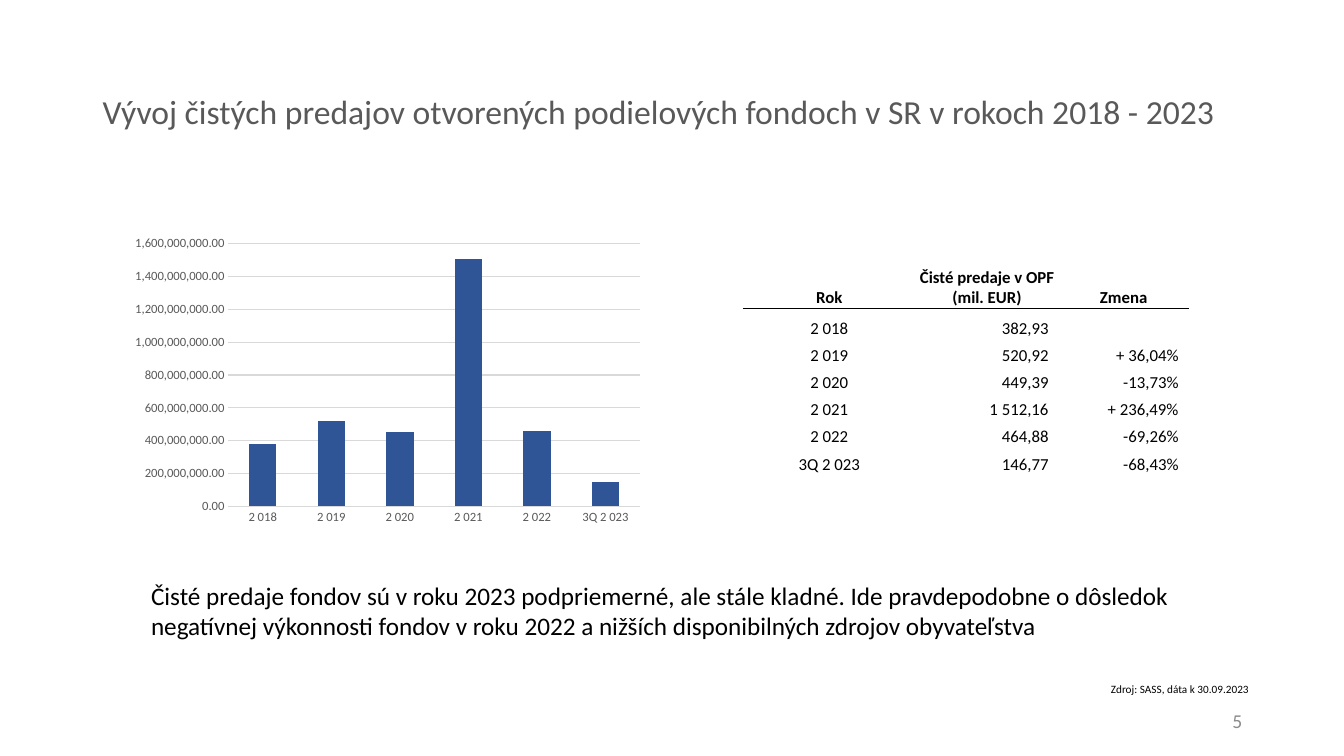
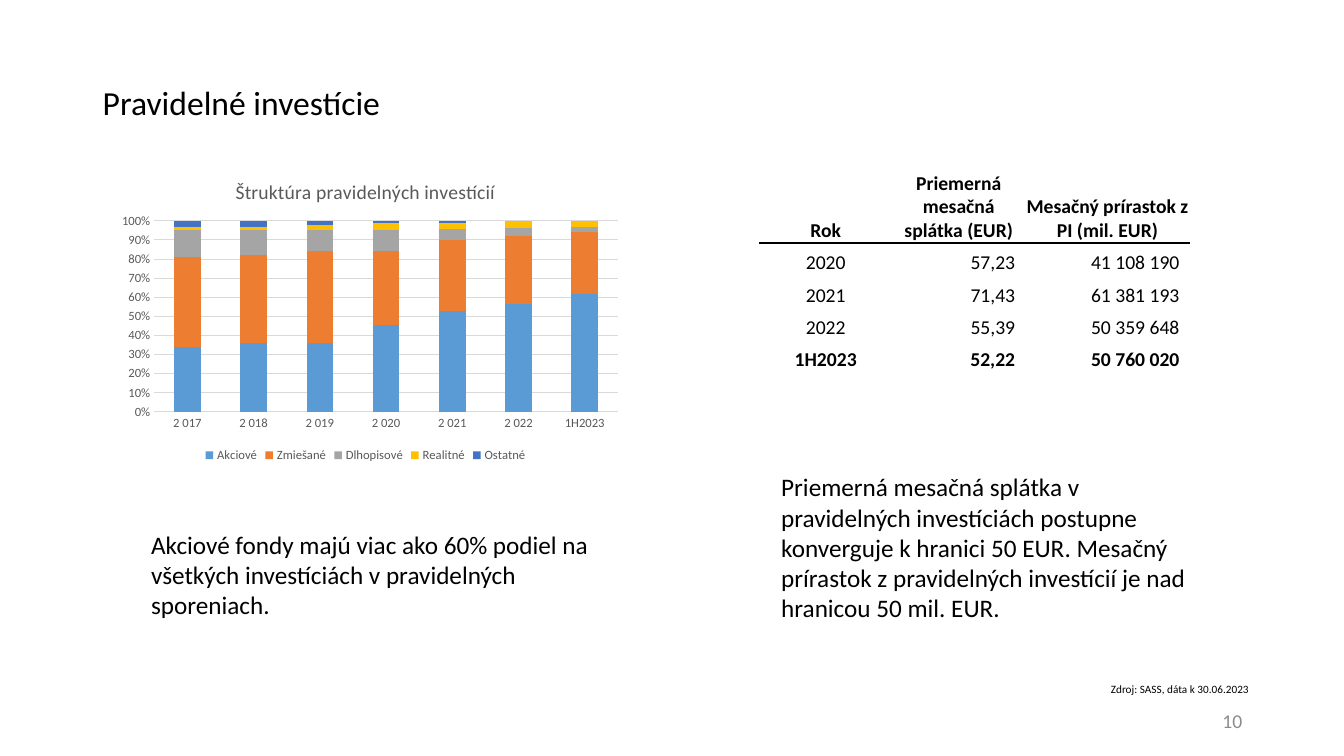
from lxml import etree
from pptx import Presentation
from pptx.chart.data import CategoryChartData
from pptx.dml.color import RGBColor
from pptx.enum.chart import XL_CHART_TYPE, XL_LEGEND_POSITION, XL_TICK_MARK
from pptx.enum.text import MSO_ANCHOR, PP_ALIGN
from pptx.oxml import parse_xml
from pptx.oxml.ns import nsdecls, qn
from pptx.util import Inches, Pt

CLUSTERED = XL_CHART_TYPE.COLUMN_CLUSTERED
STACKED = XL_CHART_TYPE.COLUMN_STACKED_100
LEGEND_BOTTOM = XL_LEGEND_POSITION.BOTTOM
NO_TICK = XL_TICK_MARK.NONE
TOP, MIDDLE, BOTTOM = MSO_ANCHOR.TOP, MSO_ANCHOR.MIDDLE, MSO_ANCHOR.BOTTOM
LEFT, CENTER, RIGHT = PP_ALIGN.LEFT, PP_ALIGN.CENTER, PP_ALIGN.RIGHT

FONT = "Calibri"
BLACK = RGBColor(0, 0, 0)
GRAY = RGBColor(0x59, 0x59, 0x59)
PAGE_GRAY = RGBColor(0x8C, 0x8C, 0x8C)
GRID = RGBColor(0xD9, 0xD9, 0xD9)
NAVY = RGBColor(0x2F, 0x55, 0x97)
BLUE = RGBColor(0x5B, 0x9B, 0xD5)
ORANGE = RGBColor(0xED, 0x7D, 0x31)
SILVER = RGBColor(0xA5, 0xA5, 0xA5)
YELLOW = RGBColor(0xFF, 0xC0, 0x00)
ROYAL = RGBColor(0x44, 0x72, 0xC4)
NO_STYLE = "{2D5ABB26-0587-4C30-8999-92F81FD0307C}"

PAGES = [
    {
        "title": "Vývoj čistých predajov otvorených podielových fondoch v SR v rokoch 2018 - 2023",
        "title_at": (0.92, 0.4, 11.94, 1.45), "title_color": GRAY,
        "number": "5", "source": "Zdroj: SASS, dáta k 30.09.2023",
        "notes": [
            ((1.4, 5.71, 10.53, 0.71),
             "Čisté predaje fondov sú v roku 2023 podpriemerné, ale stále kladné. Ide pravdepodobne o dôsledok "
             "negatívnej výkonnosti fondov v roku 2022 a nižších disponibilných zdrojov obyvateľstva"),
        ],
        "chart": {
            "kind": CLUSTERED, "at": (1.22, 2.3, 5.23, 2.96), "plot": (0.2, 0.04, 0.78, 0.88),
            "categories": ["2 018", "2 019", "2 020", "2 021", "2 022", "3Q 2 023"],
            "series": [("Series 1", NAVY, [380000000, 520000000, 450000000,
                                           1510000000, 460000000, 150000000])],
            "format": "#,##0.00", "top": 1600000000, "step": 200000000,
        },
        "table": {
            "at": (7.37, 2.52), "widths": [1.71, 1.42, 1.29], "head": 0.54, "row": 0.27,
            "size": 12, "rule": 0.5, "bold_rows": [0],
            "rows": [
                ["Rok", "Čisté predaje v OPF (mil. EUR)", "Zmena"],
                ["2 018", "382,93", ""],
                ["2 019", "520,92", "+ 36,04%"],
                ["2 020", "449,39", "-13,73%"],
                ["2 021", "1 512,16", "+ 236,49%"],
                ["2 022", "464,88", "-69,26%"],
                ["3Q 2 023", "146,77", "-68,43%"],
            ],
        },
    },
    {
        "title": "Pravidelné investície",
        "title_at": (0.92, 0.41, 11.5, 1.25), "title_color": BLACK,
        "number": "10", "source": "Zdroj: SASS, dáta k 30.06.2023",
        "notes": [
            ((1.4, 5.2, 4.71, 1.01),
             "Akciové fondy majú viac ako 60% podiel na všetkých investíciách v pravidelných sporeniach."),
            ((7.65, 4.63, 4.33, 1.62),
             "Priemerná mesačná splátka v pravidelných investíciách postupne konverguje k hranici 50 EUR. "
             "Mesačný prírastok z pravidelných investícií je nad hranicou 50 mil. EUR."),
        ],
        "chart": {
            "kind": STACKED, "at": (1.07, 1.62, 5.11, 3.01), "plot": (0.09, 0.19, 0.9, 0.63),
            "title": "Štruktúra pravidelných investícií",
            "categories": ["2 017", "2 018", "2 019", "2 020", "2 021", "2 022", "1H2023"],
            "series": [
                ("Akciové", BLUE, [34, 36, 36, 46, 53, 57, 61]),
                ("Zmiešané", ORANGE, [47, 46, 48, 39, 37, 36, 32]),
                ("Dlhopisové", SILVER, [14, 13, 11, 11, 6, 4, 3]),
                ("Realitné", YELLOW, [2, 2, 3, 4, 3, 4, 3]),
                ("Ostatné", ROYAL, [3, 3, 2, 1, 1, 0, 0]),
            ],
            "format": "0%", "top": 1, "step": 0.1,
        },
        "table": {
            "at": (7.53, 1.66), "widths": [1.32, 1.32, 1.63], "head": 0.75, "row": 0.32,
            "size": 14, "rule": 1, "bold_rows": [0, 4],
            "rows": [
                ["Rok", "Priemerná mesačná splátka (EUR)", "Mesačný prírastok z PI (mil. EUR)"],
                ["2020", "57,23", "41 108 190"],
                ["2021", "71,43", "61 381 193"],
                ["2022", "55,39", "50 359 648"],
                ["1H2023", "52,22", "50 760 020"],
            ],
        },
    },
]


def style_font(font, size, color, bold=False):
    font.name = FONT
    font.size = Pt(size)
    font.color.rgb = color
    font.bold = bold


def add_text(page, at, text, size, color=BLACK, align=LEFT, anchor=TOP, spacing=1.0):
    box = page.shapes.add_textbox(*[Inches(length) for length in at])
    box.text_frame.word_wrap = True
    box.text_frame.vertical_anchor = anchor
    para = box.text_frame.paragraphs[0]
    para.alignment = align
    para.line_spacing = spacing
    span = para.add_run()
    span.text = text
    style_font(span.font, size, color)


deck = Presentation()
deck.slide_width = Inches(13.33)
deck.slide_height = Inches(7.5)

for content in PAGES:
    page = deck.slides.add_slide(deck.slide_layouts[6])
    add_text(page, content["title_at"], content["title"], 24, content["title_color"],
             anchor=MIDDLE, spacing=0.9)
    add_text(page, (9.42, 6.95, 3, 0.4), content["number"], 14, PAGE_GRAY, RIGHT, MIDDLE)
    add_text(page, (10.92, 6.72, 1.62, 0.24), content["source"], 8)
    for at, note in content["notes"]:
        add_text(page, at, note, 18)

    plan = content["chart"]
    data = CategoryChartData()
    data.categories = plan["categories"]
    for name, color, values in plan["series"]:
        data.add_series(name, values)
    chart = page.shapes.add_chart(
        plan["kind"], *[Inches(length) for length in plan["at"]], data).chart
    style_font(chart.font, 10, BLACK)

    chart.has_title = "title" in plan
    if chart.has_title:
        span = chart.chart_title.text_frame.paragraphs[0].add_run()
        span.text = plan["title"]
        style_font(span.font, 14, GRAY)
    chart.has_legend = len(plan["series"]) > 1
    if chart.has_legend:
        chart.legend.position = LEGEND_BOTTOM
        chart.legend.include_in_layout = False
        style_font(chart.legend.font, 9, GRAY)

    plot = chart.plots[0]
    plot.vary_by_categories = False
    plot.gap_width = 150
    if plan["kind"] == STACKED:
        plot.overlap = 100
    for series, (name, color, values) in zip(plot.series, plan["series"]):
        series.format.fill.solid()
        series.format.fill.fore_color.rgb = color

    for axis in (chart.category_axis, chart.value_axis):
        axis.major_tick_mark = NO_TICK
        axis.minor_tick_mark = NO_TICK
        axis.format.line.fill.background()
        style_font(axis.tick_labels.font, 9, GRAY)
    if plan["kind"] == STACKED:
        chart.category_axis.format.line.color.rgb = GRID
        chart.category_axis.format.line.width = Pt(0.75)
    values_axis = chart.value_axis
    values_axis.minimum_scale = 0
    values_axis.maximum_scale = plan["top"]
    values_axis.major_unit = plan["step"]
    values_axis.tick_labels.number_format = plan["format"]
    values_axis.tick_labels.number_format_is_linked = False
    values_axis.major_gridlines.format.line.color.rgb = GRID
    values_axis.major_gridlines.format.line.width = Pt(0.75)

    plot_area = chart.element.find(".//" + qn("c:plotArea"))
    for old_layout in plot_area.findall(qn("c:layout")):
        plot_area.remove(old_layout)
    layout = parse_xml(f"<c:layout {nsdecls('c')}><c:manualLayout/></c:layout>")
    settings = [("layoutTarget", "inner"), ("xMode", "edge"), ("yMode", "edge")]
    settings += zip("xywh", plan["plot"])
    for tag, value in settings:
        etree.SubElement(layout[0], qn("c:" + tag)).set("val", str(value))
    plot_area.insert(0, layout)

    plan = content["table"]
    heights = [plan["head"]] + [plan["row"]] * (len(plan["rows"]) - 1)
    frame = page.shapes.add_table(
        len(heights), len(plan["widths"]), *[Inches(length) for length in plan["at"]],
        Inches(sum(plan["widths"])), Inches(sum(heights)))
    frame.element.find(".//" + qn("a:tableStyleId")).text = NO_STYLE
    table = frame.table
    table.first_row = False
    table.horz_banding = False
    for column, width in zip(table.columns, plan["widths"]):
        column.width = Inches(width)
    for row_index, texts in enumerate(plan["rows"]):
        table.rows[row_index].height = Inches(heights[row_index])
        for column_index, text in enumerate(texts):
            is_number = row_index > 0 and column_index > 0
            cell = table.cell(row_index, column_index)
            cell.margin_left = cell.margin_top = cell.margin_bottom = 0
            cell.margin_right = Inches(0.1 if is_number else 0)
            cell.vertical_anchor = BOTTOM
            cell.fill.background()
            para = cell.text_frame.paragraphs[0]
            para.alignment = RIGHT if is_number else CENTER
            span = para.add_run()
            span.text = text
            style_font(span.font, plan["size"], BLACK, row_index in plan["bold_rows"])
            if row_index == 0:
                rule = parse_xml(
                    f'<a:lnB {nsdecls("a")} w="{Pt(plan["rule"])}"><a:solidFill>'
                    f'<a:srgbClr val="{BLACK}"/></a:solidFill></a:lnB>')
                cell._tc.get_or_add_tcPr().insert(0, rule)

deck.save("out.pptx")
